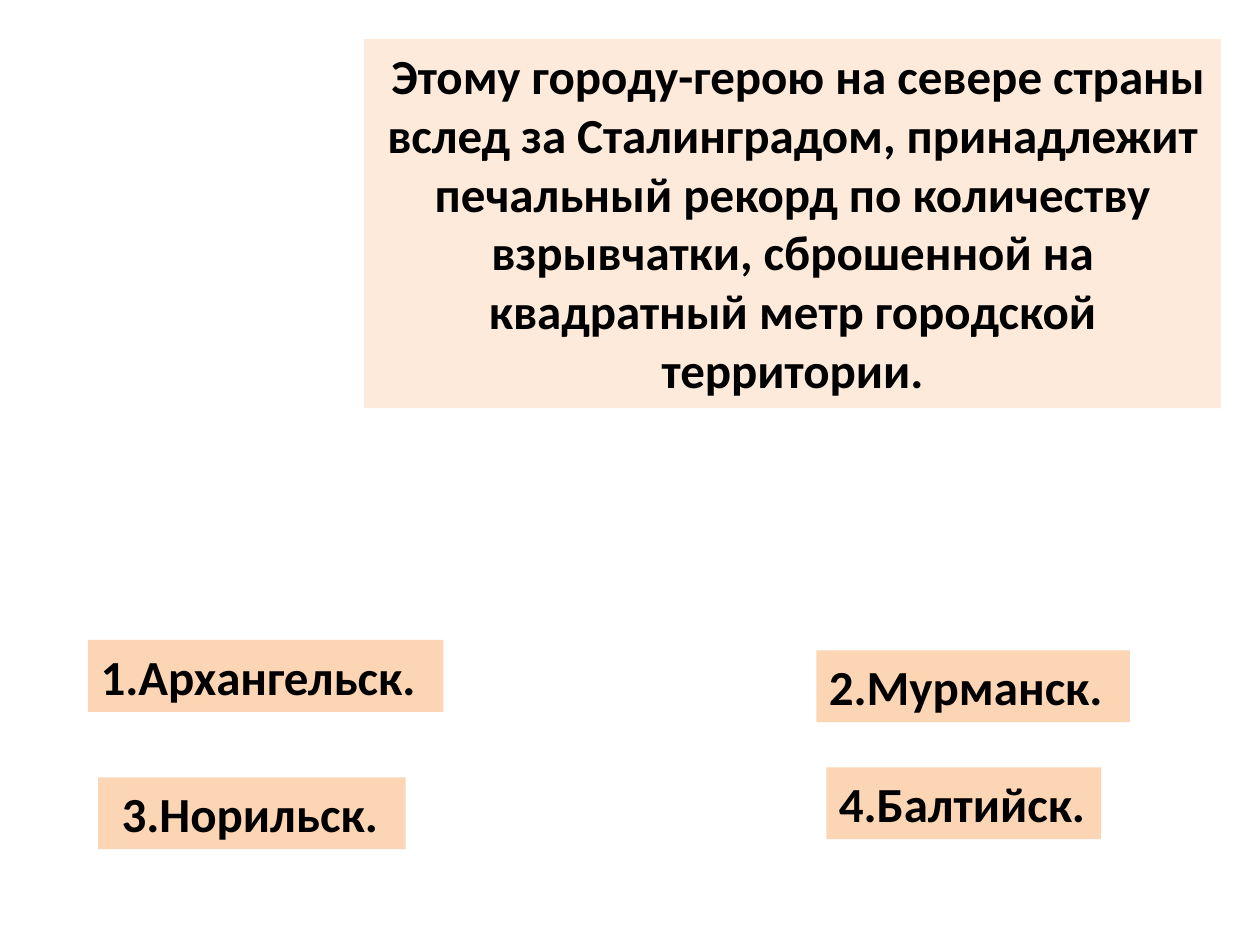
from pptx import Presentation
from pptx import util as u
from pptx.dml.color import RGBColor
from pptx.enum import text

QUESTION = (
    " Этому городу-герою на севере страны вслед за Сталинградом, "
    "принадлежит печальный рекорд по количеству взрывчатки, сброшенной "
    "на квадратный метр городской территории."
)
ANSWER_HEIGHT = 1.45
# Answer, left, top and width in centimetres
ANSWERS = [
    ("1.Архангельск.", 1.78, 12.9, 7.16),
    ("2.Мурманск.", 16.46, 13.11, 6.32),
    (" 3.Норильск.", 1.98, 15.67, 6.2),
    ("4.Балтийск.", 16.66, 15.47, 5.54),
]


def colour(value):
    return RGBColor.from_string(value)


def fill_box(box, words, fill, align):
    """Give a box its background and one bold paragraph."""
    box.fill.solid()
    box.fill.fore_color.rgb = colour(fill)
    frame = box.text_frame
    frame.word_wrap = True
    frame.auto_size = text.MSO_AUTO_SIZE.NONE
    frame.vertical_anchor = text.MSO_ANCHOR.TOP
    para = frame.paragraphs[0]
    para.alignment = align
    span = para.add_run()
    span.text = words
    span.font.name = "Calibri"
    span.font.size = u.Pt(28)
    span.font.bold = True
    span.font.color.rgb = colour("000000")


def add_question(page):
    box = page.shapes.title
    box.left, box.top = u.Cm(7.34), u.Cm(0.79)
    box.width, box.height = u.Cm(17.27), u.Cm(7.44)
    fill_box(box, QUESTION, "FDEADA", text.PP_ALIGN.CENTER)


def add_answer(page, words, left, top, width):
    box = page.shapes.add_textbox(
        u.Cm(left), u.Cm(top), u.Cm(width), u.Cm(ANSWER_HEIGHT)
    )
    fill_box(box, words, "FCD5B5", text.PP_ALIGN.LEFT)
    box.text_frame.margin_right = 0


def main():
    deck = Presentation()
    deck.slide_width, deck.slide_height = u.Cm(25.4), u.Cm(19.05)
    page = deck.slides.add_slide(deck.slide_layouts.get_by_name("Title Only"))
    add_question(page)
    for answer in ANSWERS:
        add_answer(page, *answer)
    deck.save("out.pptx")


if __name__ == "__main__":
    main()
